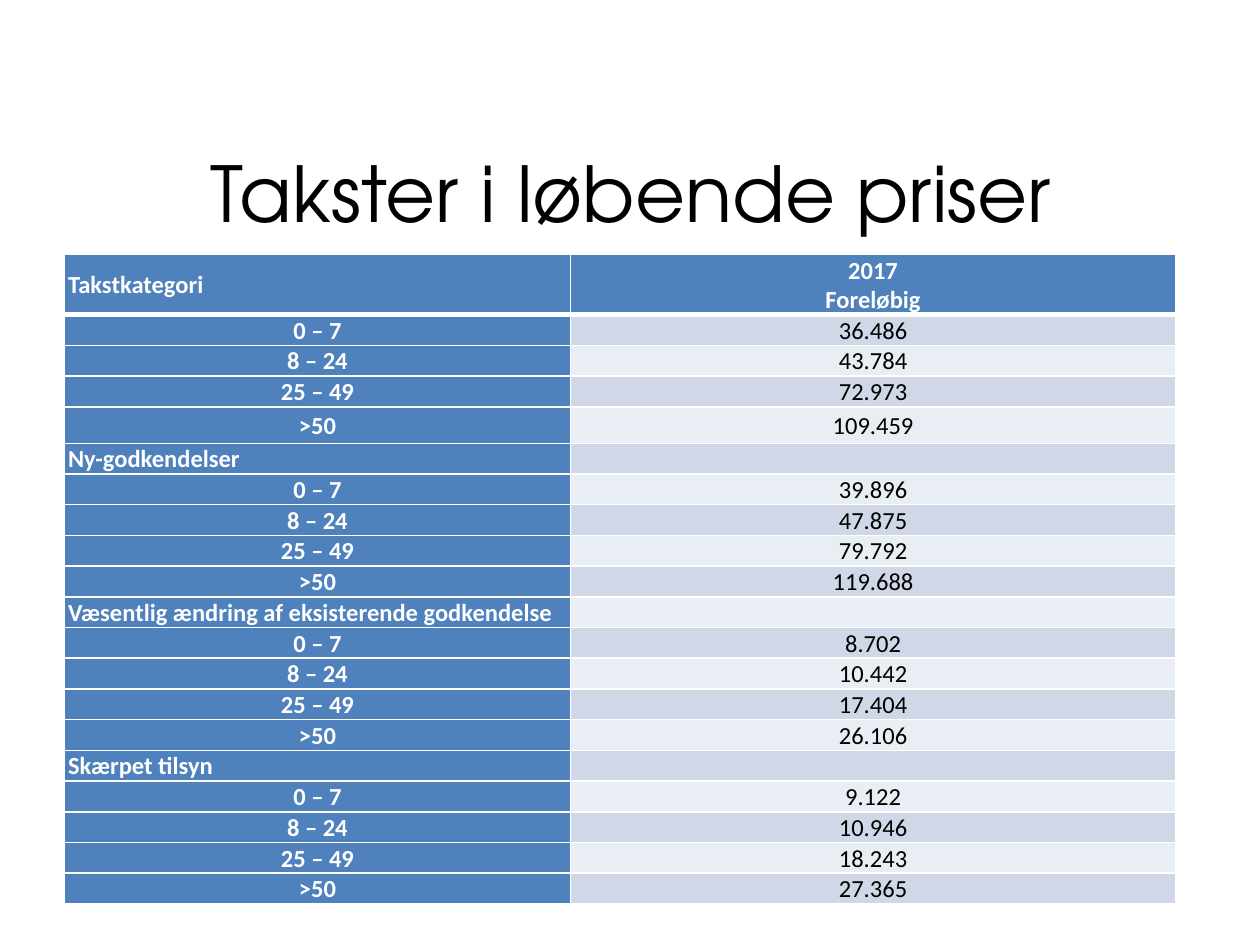
from dataclasses import dataclass

from lxml import etree
from pptx import Presentation
from pptx.dml.color import RGBColor
from pptx.enum.text import MSO_ANCHOR, PP_ALIGN
from pptx.oxml.ns import qn
from pptx.util import Inches, Pt

LEFT, MID = PP_ALIGN.LEFT, PP_ALIGN.CENTER
CENTER = MSO_ANCHOR.MIDDLE
COLS, ROWS = 100, 75
WIDE, HIGH = Inches(10), Inches(7.5)


@dataclass(frozen=True)
class Theme:
    head: str = "4F81BD"
    bands: tuple = ("D0D8E8", "E9EDF4")
    white: str = "FFFFFF"
    black: str = "000000"
    title_font: str = "TeX Gyre Adventor"
    body_font: str = "Calibri"
    title_size: int = 44
    body_size: int = 14
    thin: int = 1
    thick: int = 3


THEME = Theme()
RANGES = ("0 – 7", "8 – 24", "25 – 49", ">50")
GROUPS = (
    ("Takstkategori", "2017\nForeløbig", ("36.486", "43.784", "72.973", "109.459")),
    ("Ny-godkendelser", "", ("39.896", "47.875", "79.792", "119.688")),
    ("Væsentlig ændring af eksisterende godkendelse", "",
     ("8.702", "10.442", "17.404", "26.106")),
    ("Skærpet tilsyn", "", ("9.122", "10.946", "18.243", "27.365")),
)


def across(cols):
    return round(WIDE * cols / COLS)


def down(rows):
    return round(HIGH * rows / ROWS)


def place(box):
    left, top, width, height = box
    return across(left), down(top), across(width), down(height)


def write(frame, text, *, font=THEME.body_font, size=THEME.body_size,
          color=THEME.black, bold=False, align=MID):
    frame.word_wrap = True
    for i, line in enumerate(text.split("\n")):
        para = frame.add_paragraph() if i else frame.paragraphs[0]
        para.alignment = align
        if not line:
            para._p.get_or_add_endParaRPr().set("sz", str(size * 100))
            continue
        run = para.add_run()
        run.text = line
        run.font.name = font
        run.font.size = Pt(size)
        run.font.bold = bold
        run.font.color.rgb = RGBColor.from_string(color)


def edge(cell, side, width):
    props = cell._tc.get_or_add_tcPr()
    line = etree.SubElement(props, qn(f"a:ln{side}"), w=str(Pt(width)))
    fill = etree.SubElement(line, qn("a:solidFill"))
    etree.SubElement(fill, qn("a:srgbClr"), val=THEME.white)


def style(cell, fill, top):
    cell.margin_left = cell.margin_right = Inches(0.03)
    cell.margin_top, cell.margin_bottom = Inches(0.01), 0
    cell.vertical_anchor = CENTER
    for side in "LRTB" if top else "LRB":
        edge(cell, side, THEME.thick if top and side == "B" else THEME.thin)
    cell.fill.solid()
    cell.fill.fore_color.rgb = RGBColor.from_string(fill)


def add_title(slide, box):
    frame = slide.shapes.add_textbox(*place(box)).text_frame
    frame.vertical_anchor = CENTER
    write(frame, "Takster i løbende priser", font=THEME.title_font,
          size=THEME.title_size)


def add_rates(slide, box):
    lines = []
    for name, note, rates in GROUPS:
        lines.append((name, note, LEFT))
        lines += [(span, rate, MID) for span, rate in zip(RANGES, rates)]
    shape = slide.shapes.add_table(len(lines), 2, *place(box))
    table = shape.table
    for col, width in zip(table.columns, (40.2, 48)):
        col.width = across(width)
    tall = {0: 3.8, len(RANGES): 2.9}
    for i, (label, value, align) in enumerate(lines):
        table.rows[i].height = down(tall.get(i, 2.2))
        name, rate = table.cell(i, 0), table.cell(i, 1)
        top = i == 0
        style(name, THEME.head, top)
        style(rate, THEME.head if top else THEME.bands[(i - 1) % 2], top)
        write(name.text_frame, label, color=THEME.white, bold=True, align=align)
        write(rate.text_frame, value, bold=top,
              color=THEME.white if top else THEME.black)
    shape.height = down(box[3])


def main():
    deck = Presentation()
    deck.slide_width, deck.slide_height = WIDE, HIGH
    slide = deck.slides.add_slide(deck.slide_layouts[6])
    add_title(slide, (5.1, 9.2, 90, 12))
    add_rates(slide, (5.1, 20.2, 88.2, 51.3))
    deck.save("out.pptx")


if __name__ == "__main__":
    main()
